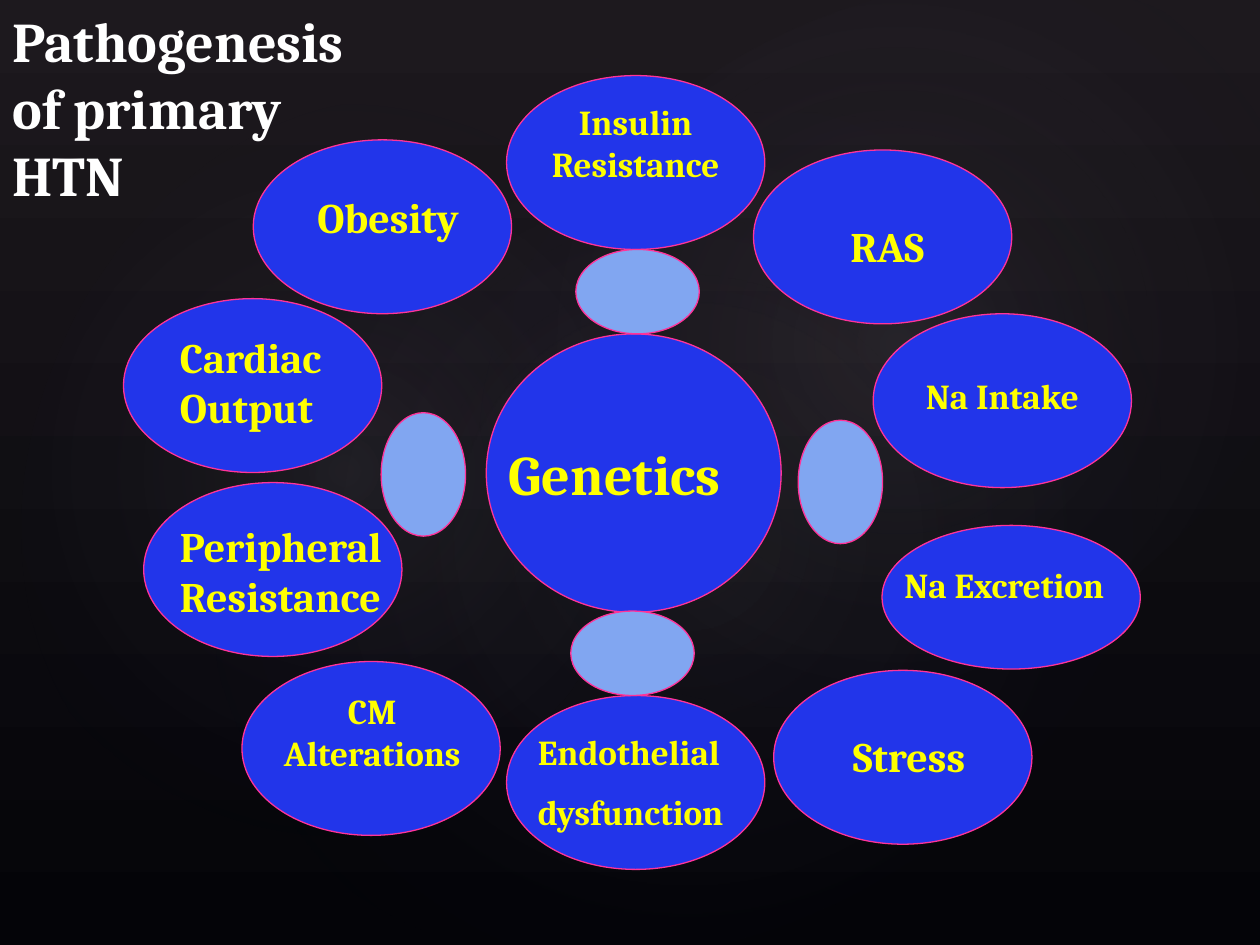
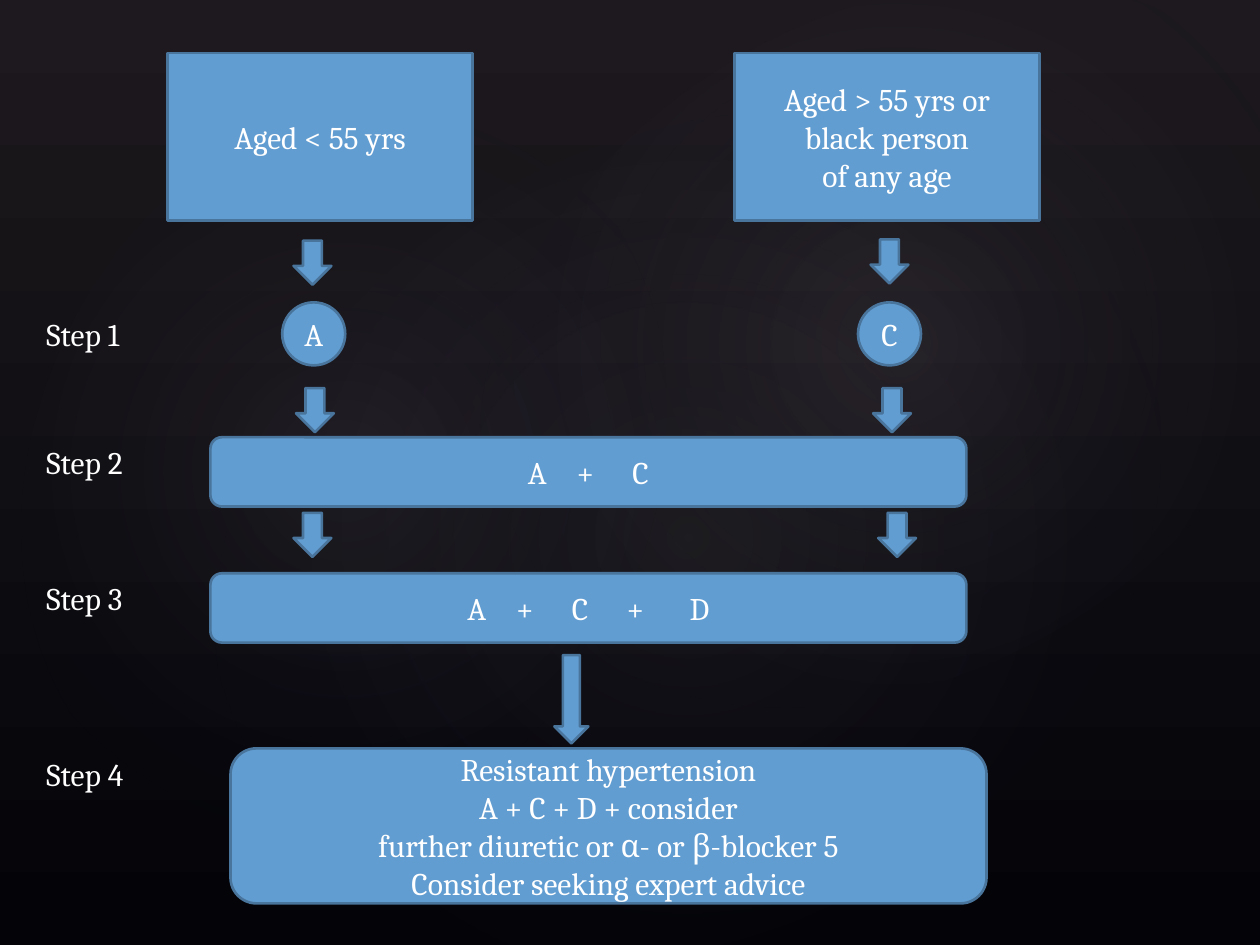
from dataclasses import dataclass
from lxml import etree
from pptx import Presentation
from pptx.dml.color import RGBColor
from pptx.enum.shapes import MSO_SHAPE
from pptx.enum.text import MSO_ANCHOR, MSO_AUTO_SIZE, PP_ALIGN
from pptx.oxml import parse_xml
from pptx.oxml.ns import nsdecls
from pptx.util import Inches, Pt

OVAL = MSO_SHAPE.OVAL
RECTANGLE = MSO_SHAPE.RECTANGLE
ROUNDED = MSO_SHAPE.ROUNDED_RECTANGLE
CIRCLE = MSO_SHAPE.FLOWCHART_CONNECTOR
ARROW = MSO_SHAPE.DOWN_ARROW
LEFT, CENTER = PP_ALIGN.LEFT, PP_ALIGN.CENTER
TOP, MIDDLE = MSO_ANCHOR.TOP, MSO_ANCHOR.MIDDLE
NO_AUTOFIT = MSO_AUTO_SIZE.NONE


@dataclass(frozen=True)
class Theme:
    font: str = "Cambria"
    white: str = "FFFFFF"
    yellow: str = "FFFF00"
    petal: str = "2235EA"
    link: str = "81A6F1"
    pink: str = "FF3399"
    step: str = "629DD1"
    step_edge: str = "49749B"
    sky: str = "1D191E"
    ground: str = "040408"
    glow: str = "C4BCC6"
    glow_edge: str = "242852"
    title: int = 32
    large: int = 24
    medium: int = 20
    body: int = 18


theme = Theme()


def add_figure(page, kind, place, fill, edge, width):
    shape = page.shapes.add_shape(kind, *map(Inches, place))
    shape.shadow.inherit = False
    shape.fill.solid()
    shape.fill.fore_color.rgb = RGBColor.from_string(fill)
    shape.line.color.rgb = RGBColor.from_string(edge)
    shape.line.width = Pt(width)
    return shape


def write(box, text, size, color, bold=False, align=LEFT, anchor=TOP, wrap=True):
    frame = box.text_frame
    frame.text = text
    frame.word_wrap = wrap
    frame.auto_size = NO_AUTOFIT
    frame.vertical_anchor = anchor
    for para in frame.paragraphs:
        para.alignment = align
        for span in para.runs:
            span.font.name = theme.font
            span.font.size = Pt(size)
            span.font.bold = bold
            span.font.color.rgb = RGBColor.from_string(color)


deck = Presentation()
deck.slide_width, deck.slide_height = Inches(10), Inches(7.5)
master = deck.slide_master
backdrop = master.background.fill
backdrop.gradient()
backdrop.gradient_angle = 270
for stop, color in zip(backdrop.gradient_stops, (theme.sky, theme.ground)):
    stop.color.rgb = RGBColor.from_string(color)

wheel = deck.slides.add_slide(deck.slide_layouts[5])
steps = deck.slides.add_slide(deck.slide_layouts[6])

glows = [
    ((1.5, 1.14, 7.92, 6.24), 328.7, 7),
    ((-0.3, 1.28, 6.06, 4.9), 294.3, 8),
    ((3.58, 0.13, 7.09, 5.2), 328.7, 8),
]
for index, (place, angle, opacity) in enumerate(glows):
    glow = add_figure(wheel, OVAL, place, theme.glow, theme.glow, 1)
    glow.rotation = angle
    glow.line.fill.background()
    gradient = parse_xml(
        f'<a:gradFill {nsdecls("a")} rotWithShape="1"><a:gsLst>'
        f'<a:gs pos="0"><a:srgbClr val="{theme.glow}"><a:alpha val="{opacity * 1000}"/></a:srgbClr></a:gs>'
        f'<a:gs pos="58000"><a:srgbClr val="{theme.glow_edge}"><a:alpha val="0"/></a:srgbClr></a:gs>'
        '</a:gsLst><a:path path="circle"><a:fillToRect l="50000" t="50000" r="50000" b="50000"/></a:path>'
        '</a:gradFill>'
    )
    properties = glow.element.spPr
    solid = properties.find("{*}solidFill")
    properties.replace(solid, gradient)
    glow.element.nvSpPr.cNvPr.set("id", str(100 + index))
    master.shapes.element.insert(2 + index, glow.element)

title = wheel.shapes.title
title.left, title.top, title.width, title.height = map(Inches, (0, 0, 2.92, 1.72))
write(title, "Pathogenesis\nof primary\nHTN", theme.title, theme.white, bold=True)

add_figure(wheel, OVAL, (3.86, 2.65, 2.34, 2.21), theme.petal, theme.pink, 0.75)
petals = [
    (4.02, 0.6), (5.98, 1.19), (2.01, 1.11), (6.14, 5.32), (0.98, 2.37),
    (1.14, 3.83), (1.92, 5.25), (6.93, 2.49), (4.02, 5.52),
]
for left, top in petals:
    add_figure(wheel, OVAL, (left, top, 2.05, 1.38), theme.petal, theme.pink, 0.75)
add_figure(wheel, OVAL, (7, 4.17, 2.05, 1.14), theme.petal, theme.pink, 0.75)

for left, top, angle in [(6.18, 3.49, 270), (2.87, 3.43, 270), (4.53, 4.85, 0), (4.57, 1.98, 0)]:
    link = add_figure(wheel, OVAL, (left, top, 0.98, 0.67), theme.link, theme.pink, 0.75)
    link.rotation = angle

labels = [
    ("Genetics", (3.94, 3.44, 2.09, 0.64), theme.title, LEFT),
    ("Cardiac\vOutput", (1.33, 2.58, 1.42, 0.91), theme.large, LEFT),
    ("Peripheral Resistance", (1.33, 4.08, 1.92, 0.91), theme.large, LEFT),
    ("Na Intake", (7.25, 2.92, 1.67, 0.44), theme.medium, LEFT),
    ("Na Excretion", (7.08, 4.42, 2, 0.44), theme.medium, LEFT),
    ("RAS", (6.65, 1.7, 1, 0.5), theme.large, LEFT),
    ("Obesity", (2.42, 1.47, 1.55, 0.5), theme.large, LEFT),
    ("Insulin Resistance", (4.17, 0.75, 1.75, 0.77), theme.medium, CENTER),
    ("Endothelial\ndysfunction", (4.17, 5.75, 1.87, 0.94), theme.medium, LEFT),
    ("Stress", (6.67, 5.75, 1.12, 0.5), theme.large, LEFT),
    ("CM Alterations", (2.08, 5.42, 1.75, 0.77), theme.medium, CENTER),
]
for text, place, size, align in labels:
    box = wheel.shapes.add_textbox(*map(Inches, place))
    write(box, text, size, theme.yellow, bold=True, align=align)
    for para in box.text_frame.paragraphs[1:]:
        para.space_before = Pt(10)

nodes = [
    (RECTANGLE, (1.33, 0.42, 2.42, 1.33), "Aged < 55 yrs"),
    (RECTANGLE, (5.83, 0.42, 2.42, 1.33), "Aged > 55 yrs or\nblack person\nof any age"),
    (CIRCLE, (2.24, 2.4, 0.5, 0.5), "A"),
    (CIRCLE, (6.81, 2.4, 0.5, 0.5), "C"),
    (ROUNDED, (1.83, 5.94, 6, 1.23),
     "Resistant hypertension\nA + C + D + consider\n"
     "further diuretic or α- or β-blocker 5\nConsider seeking expert advice"),
]
for kind, place, text in nodes:
    node = add_figure(steps, kind, place, theme.step, theme.step_edge, 1.5)
    write(node, text, theme.body, theme.white, align=CENTER, anchor=MIDDLE)

for top, drugs, gaps in [(3.47, "A+C", (13, 18)), (4.55, "A+C+D", (13, 18, 18, 22))]:
    bar = add_figure(steps, ROUNDED, (1.67, top, 6, 0.55), theme.step, theme.step_edge, 1.5)
    para = bar.text_frame.paragraphs[0]
    for index, drug in enumerate(drugs):
        if index:
            space = para.add_run()
            space.text = " "
        para.add_run().text = drug
    for span in para.runs:
        span.font.name = theme.font
        span.font.size = Pt(theme.body)
        span.font.color.rgb = RGBColor.from_string(theme.white)
    for space, gap in zip(para.runs[1::2], gaps):
        space._r.get_or_add_rPr().set("spc", str(gap * 100))
    para.alignment = CENTER
    bar.text_frame.vertical_anchor = MIDDLE

for number, top in enumerate((2.45, 3.47, 4.55, 5.94), start=1):
    box = steps.shapes.add_textbox(*map(Inches, (0.27, top, 0.88, 0.4)))
    write(box, f"Step {number}", theme.body, theme.white, wrap=False)

for left, top in [(2.33, 1.91), (6.91, 1.9), (2.35, 3.08), (6.93, 3.08), (2.33, 4.07), (6.97, 4.07)]:
    add_figure(steps, ARROW, (left, top, 0.3, 0.35), theme.step, theme.step_edge, 1.5)
add_figure(steps, ARROW, (4.4, 5.2, 0.27, 0.7), theme.step, theme.step_edge, 1.5)

deck.save("out.pptx")
